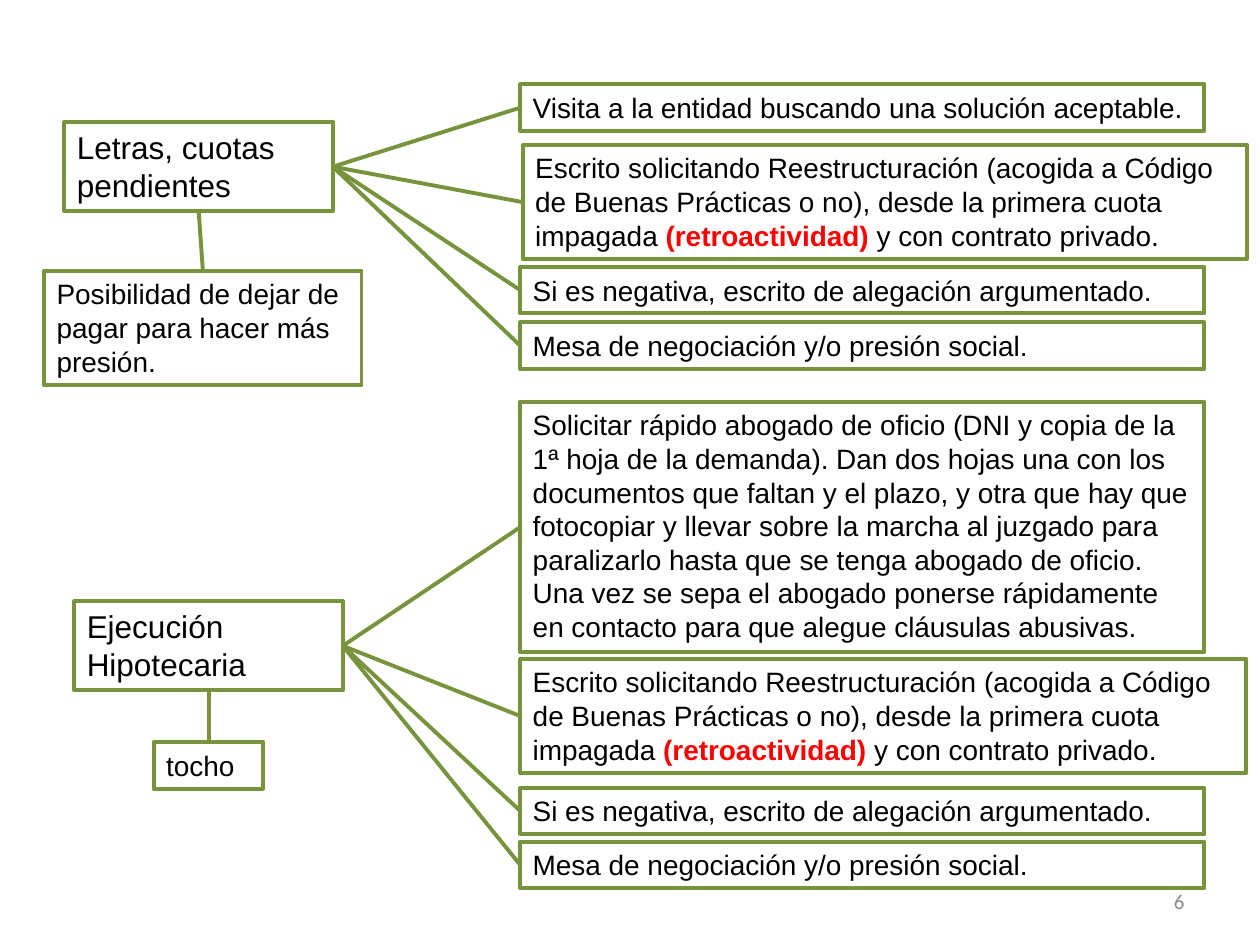
from pptx import Presentation
from pptx.dml.color import RGBColor
from pptx.enum.shapes import MSO_CONNECTOR, MSO_SHAPE
from pptx.enum.text import MSO_ANCHOR, MSO_AUTO_SIZE, PP_ALIGN
from pptx.oxml.ns import qn
from pptx.util import Cm, Pt
from lxml.etree import SubElement

GREEN, BLACK, RED, GREY = "77933C", "000000", "FF0000", "8C8C8C"
TOP, LEFT, BOTTOM, RIGHT = range(4)  # connection sites of a rectangle
LINE, THREE = 0.94, 2.31  # heights of boxes with one and three lines
WIDE = 13.79

color = RGBColor.from_string

deck = Presentation()
deck.slide_width, deck.slide_height = Cm(25.4), Cm(19.05)
slide = deck.slides.add_slide(deck.slide_layouts[6])
shapes = slide.shapes


def add_box(x, y, w, h, parts, size=16):
    """Outlined box; every second part of the text is bold red."""
    box = shapes.add_shape(MSO_SHAPE.RECTANGLE, Cm(x), Cm(y), Cm(w), Cm(h))
    box.shadow.inherit = False
    box.fill.background()
    box.line.color.rgb = color(GREEN)
    box.line.width = Pt(2.25)
    frame = box.text_frame
    frame.word_wrap = True
    frame.auto_size = MSO_AUTO_SIZE.SHAPE_TO_FIT_TEXT
    frame.vertical_anchor = MSO_ANCHOR.TOP
    para = frame.paragraphs[0]
    para.alignment = PP_ALIGN.LEFT
    for i, part in enumerate(parts):
        run = para.add_run()
        run.text = part
        run.font.name = "Arial"
        run.font.size = Pt(size)
        run.font.bold = i % 2 == 1
        run.font.color.rgb = color(RED if i % 2 else BLACK)
    return box


def link(start, site, end, goal):
    """Green line between sites of two boxes."""
    line = shapes.add_connector(MSO_CONNECTOR.STRAIGHT, 0, 0, 0, 0)
    line.begin_connect(start, site)
    line.end_connect(end, goal)
    line.line.color.rgb = color(GREEN)
    line.line.width = Pt(2.25)
    SubElement(line._element.spPr, qn("a:effectLst"))


# Texts shared by both branches
visit = ["Visita a la entidad buscando una solución aceptable."]
lawyer = [
    "Solicitar rápido abogado de oficio (DNI y copia de la 1ª hoja de la "
    "demanda). Dan dos hojas una con los documentos que faltan y el plazo, y "
    "otra que hay que fotocopiar y llevar sobre la marcha al juzgado para "
    "paralizarlo hasta que se tenga abogado de oficio. Una vez se sepa el "
    "abogado ponerse rápidamente en contacto para que alegue cláusulas abusivas."
]
letter = [
    "Escrito solicitando Reestructuración (acogida a Código de Buenas "
    "Prácticas o no), desde la primera cuota impagada ",
    "(retroactividad) ",
    "y con contrato privado.",
]
claim = ["Si es negativa, escrito de alegación argumentado."]
table = ["Mesa de negociación y/o presión social."]

# Each branch: topic, note below it, steps to the right (x, y, w, h, text)
branches = [
    (
        (1.3, 2.46, "Letras, cuotas pendientes"),
        (0.89, 5.46, 6.4, THREE,
         ["Posibilidad de dejar de pagar para hacer más presión."]),
        [
            (10.49, 1.7, WIDE, LINE, visit),
            (10.54, 2.92, 14.6, THREE, letter),
            (10.49, 5.38, WIDE, LINE, claim),
            (10.49, 6.5, WIDE, LINE, table),
        ],
    ),
    (
        (1.5, 12.12, "Ejecución Hipotecaria"),
        (3.1, 14.96, 2.21, LINE, ["tocho"]),
        [
            (10.49, 8.1, WIDE, 5.05, lawyer),
            (10.49, 13.28, 14.63, THREE, letter),
            (10.49, 15.88, WIDE, LINE, claim),
            (10.49, 16.97, WIDE, LINE, table),
        ],
    ),
]

for (x, y, name), note, steps in branches:
    topic = add_box(x, y, 5.41, 1.8, [name], 18)
    link(topic, BOTTOM, add_box(*note), TOP)
    for step in steps:
        link(topic, RIGHT, add_box(*step), LEFT)

# Slide number
num = shapes.add_textbox(Cm(18.21), Cm(17.65), Cm(5.92), Cm(1.02))
frame = num.text_frame
frame.word_wrap = True
frame.vertical_anchor = MSO_ANCHOR.MIDDLE
para = frame.paragraphs[0]
para.text = "6"
para.alignment = PP_ALIGN.RIGHT
font = para.runs[0].font
font.name, font.size = "Calibri", Pt(12)
font.color.rgb = color(GREY)

deck.save("out.pptx")
